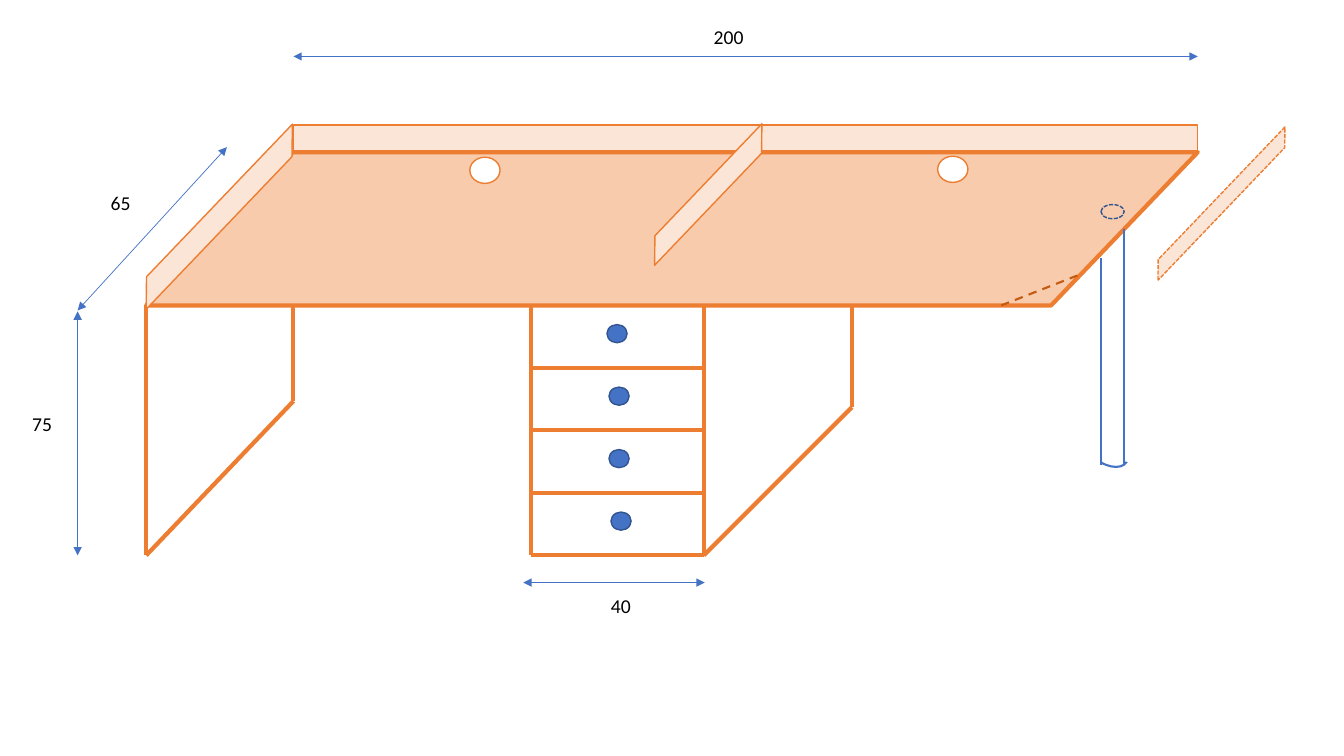
from lxml import etree
from pptx import Presentation
from pptx.dml.color import RGBColor
from pptx.enum.dml import MSO_LINE
from pptx.enum.shapes import MSO_CONNECTOR, MSO_SHAPE
from pptx.oxml.ns import qn
from pptx.util import Inches, Pt

STRAIGHT = MSO_CONNECTOR.STRAIGHT
PARALLELOGRAM = MSO_SHAPE.PARALLELOGRAM
RECTANGLE = MSO_SHAPE.RECTANGLE
OVAL = MSO_SHAPE.OVAL
ARC = MSO_SHAPE.ARC
SHORT_DASH = MSO_LINE.SQUARE_DOT
SYSTEM_DASH = "sysDash"
DASH = MSO_LINE.DASH

COLORS = {
    "frame": "ED7D31", "top": "F8CBAD", "screen": "FBE5D6", "cut": "C55A11",
    "blue": "4472C4", "knob_edge": "325491", "hole": "FFFFFF", "text": "000000",
}
FONT = "Calibri"
SLIDE_SIZE = (13.33, 7.5)

LEFT, BACK_LEFT, RIGHT = 1.45, 2.91, 11.88
BACK, FRONT, FLOOR = 1.51, 3.03, 5.51
DRAWER_LEFT, DRAWER_RIGHT, SIDE_BACK = 5.27, 6.98, 8.45
SIDE_FLOOR, CABINET_FLOOR = 3.98, 4.04
DRAWERS = 4
DRAWER_HEIGHT = (FLOOR - FRONT) / DRAWERS
KNOB_LEFTS = [6.02, 6.04, 6.04, 6.06]
KNOB_SIZE = (0.2, 0.18)
KNOB_DROP = 0.19
POST_LEFT, POST_RIGHT, POST_BOTTOM = 10.92, 11.15, 4.61
SCREEN_TURN, SCREEN_SLANT = 313.7, 1.072
HOLE_LEFTS_TOPS = [(9.3, 1.55), (4.66, 1.56)]

FRAME_LINES = [
    (LEFT, FRONT, LEFT, FLOOR),
    (BACK_LEFT, FRONT, BACK_LEFT, SIDE_FLOOR),
    (BACK_LEFT, SIDE_FLOOR, LEFT, FLOOR),
    (SIDE_BACK, FRONT, SIDE_BACK, CABINET_FLOOR),
    (SIDE_BACK, CABINET_FLOOR, DRAWER_RIGHT, FLOOR),
    (DRAWER_LEFT, FRONT, DRAWER_LEFT, FLOOR),
    (DRAWER_RIGHT, FRONT, DRAWER_RIGHT, FLOOR),
]
POST_LINES = [
    (POST_LEFT, 2.56, POST_LEFT, POST_BOTTOM),
    (POST_RIGHT, 2.27, POST_RIGHT, POST_BOTTOM),
]
SIDE_SCREEN = (1.01, 2.04, 2.33, 0.22)
BACK_SCREEN = (BACK_LEFT, 1.24, RIGHT - BACK_LEFT, 0.26)
MIDDLE_SCREEN = (6.15, 1.83, 1.75, 0.2)
LOOSE_SCREEN = (11.13, 1.95, 1.97, 0.14)
CORNER_CUT = (9.93, FRONT, 10.72, 2.72)

DIMENSIONS = [
    ("200", (6.98, 0.2, 0.74, 0.34), (RIGHT, 0.56, BACK_LEFT, 0.56)),
    ("75", (0.22, 4.04, 0.74, 0.34), (0.77, FLOOR, 0.77, 3.09)),
    ("65", (1, 1.84, 0.74, 0.34), (0.77, 3.08, 2.25, 1.46)),
    ("40", (5.96, 5.84, 0.55, 0.34), (5.19, 5.78, 6.99, 5.78)),
]


def color(name):
    return RGBColor.from_string(COLORS[name])


def set_line(line, name, width, dash=None):
    line.color.rgb = color(name)
    line.width = Pt(width)
    if dash == SYSTEM_DASH:
        line.dash_style = SHORT_DASH
        line._ln.find(qn("a:prstDash")).set("val", SYSTEM_DASH)
    elif dash:
        line.dash_style = dash


def add_figure(slide, kind, box, fill, edge, width=1, dash=None, turn=0, adjust=()):
    shape = slide.shapes.add_shape(kind, *map(Inches, box))
    shape.shadow.inherit = False
    shape.rotation = turn
    for index, value in enumerate(adjust):
        shape.adjustments[index] = value
    if fill:
        shape.fill.solid()
        shape.fill.fore_color.rgb = color(fill)
    else:
        shape.fill.background()
    set_line(shape.line, edge, width, dash)


def add_line(slide, ends, name, width, dash=None, arrows=False):
    connector = slide.shapes.add_connector(STRAIGHT, *map(Inches, ends))
    set_line(connector.line, name, width, dash)
    if arrows:
        for end in ("a:headEnd", "a:tailEnd"):
            etree.SubElement(connector.line._ln, qn(end)).set("type", "triangle")
    etree.SubElement(connector._element.spPr, qn("a:effectLst"))


def add_screen(slide, box, dash=None):
    add_figure(slide, PARALLELOGRAM, box, "screen", "frame", 1, dash,
               SCREEN_TURN, [SCREEN_SLANT])


def add_label(slide, text, box):
    frame = slide.shapes.add_textbox(*map(Inches, box)).text_frame
    frame.word_wrap = True
    run = frame.paragraphs[0].add_run()
    run.text = text
    run.font.name = FONT
    run.font.size = Pt(14)
    run.font.color.rgb = color("text")


def draw_desk(slide):
    add_figure(slide, PARALLELOGRAM, (LEFT, BACK, RIGHT - LEFT, FRONT - BACK),
               "top", "frame", 3, adjust=[0.957])
    for ends in FRAME_LINES:
        add_line(slide, ends, "frame", 3)
    for row, knob_left in enumerate(KNOB_LEFTS):
        top = FRONT + row * DRAWER_HEIGHT
        bottom = top + DRAWER_HEIGHT
        add_line(slide, (DRAWER_RIGHT, bottom, DRAWER_LEFT, bottom), "frame", 3)
        add_figure(slide, OVAL, (knob_left, top + KNOB_DROP, *KNOB_SIZE),
                   "blue", "knob_edge")


def draw_post(slide):
    for ends in POST_LINES:
        add_line(slide, ends, "blue", 1.5)
    add_figure(slide, ARC, (10.85, 4.25, 0.27, 0.44), None, "blue", 1.5,
               turn=121.4, adjust=[161.553, 0])
    add_figure(slide, OVAL, (POST_LEFT, 2.03, POST_RIGHT - POST_LEFT, 0.14),
               None, "knob_edge", 1, SYSTEM_DASH)


def draw_screens(slide):
    add_screen(slide, SIDE_SCREEN)
    add_figure(slide, RECTANGLE, BACK_SCREEN, "screen", "frame")
    add_screen(slide, MIDDLE_SCREEN)
    add_screen(slide, LOOSE_SCREEN, SYSTEM_DASH)
    for left, top in HOLE_LEFTS_TOPS:
        add_figure(slide, OVAL, (left, top, 0.3, 0.26), "hole", "frame")
    add_line(slide, CORNER_CUT, "cut", 1.5, DASH)


def main():
    presentation = Presentation()
    presentation.slide_width, presentation.slide_height = map(Inches, SLIDE_SIZE)
    slide = presentation.slides.add_slide(presentation.slide_layouts[6])
    draw_desk(slide)
    draw_post(slide)
    draw_screens(slide)
    for text, box, ends in DIMENSIONS:
        add_line(slide, ends, "blue", 0.5, arrows=True)
        add_label(slide, text, box)
    presentation.save("out.pptx")


if __name__ == "__main__":
    main()
